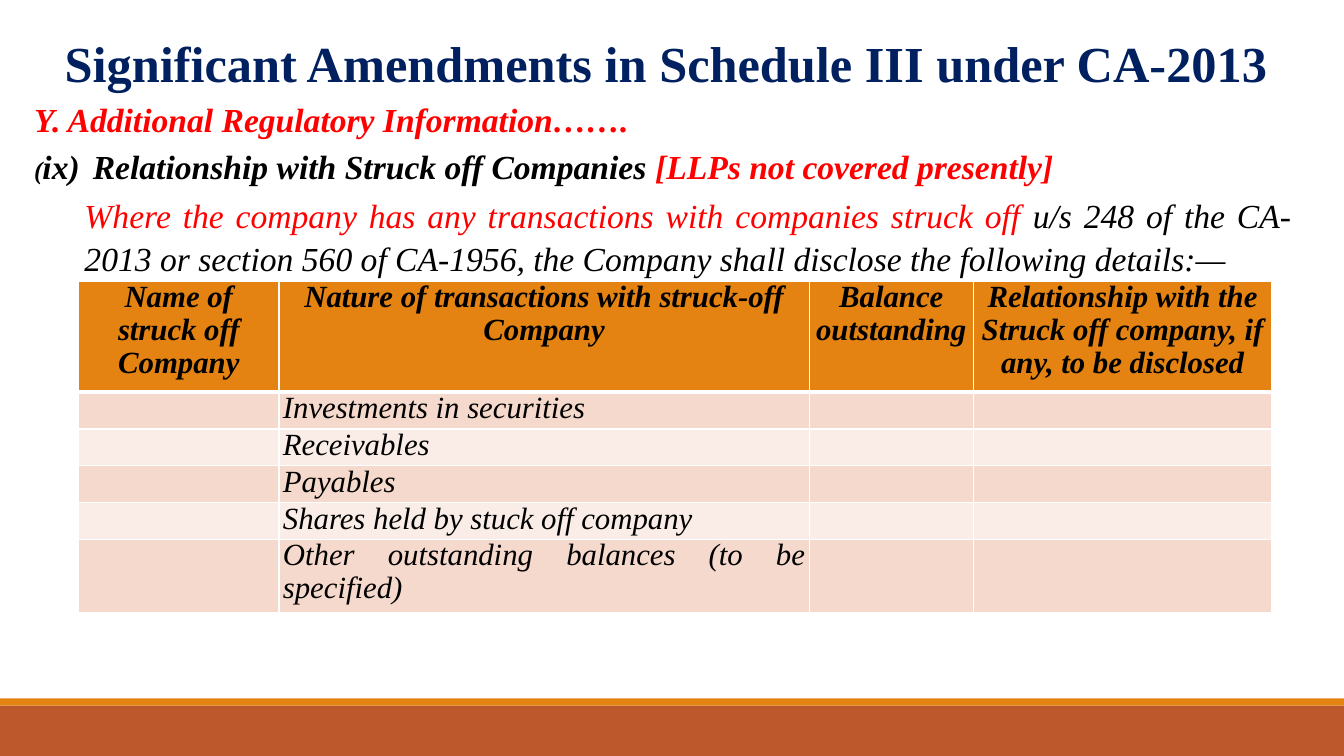
from lxml import etree
from pptx import Presentation
from pptx.dml.color import RGBColor
from pptx.enum.shapes import MSO_SHAPE
from pptx.enum.text import PP_ALIGN
from pptx.oxml.ns import qn
from pptx.util import Cm, Pt

RECT = MSO_SHAPE.RECTANGLE
CENTER, JUSTIFY = PP_ALIGN.CENTER, PP_ALIGN.JUSTIFY
BLACK, RED, NAVY = "000000", "FF0000", "002060"
ORANGE, RUST, WHITE = "E48312", "BD582C", "FFFFFF"


def color(code):
    return RGBColor.from_string(code)


def write(para, parts, align, gap, line):
    para.alignment = align
    para.space_before = para.space_after = Pt(gap)
    para.line_spacing = line
    for text, size, code, bold, italic in parts:
        run = para.add_run()
        run.text = text
        font = run.font
        font.name, font.size = "Times New Roman", Pt(size)
        font.bold, font.italic = bold, italic
        font.color.rgb = color(code)


deck = Presentation()
deck.slide_width, deck.slide_height = Cm(33.87), Cm(19.05)
slide = deck.slides.add_slide(deck.slide_layouts[6])
shapes = slide.shapes

for top, height, code in [(17.78, 1.27, RUST), (17.6, 0.18, ORANGE)]:
    bar = shapes.add_shape(RECT, 0, Cm(top), Cm(33.87), Cm(height))
    bar.shadow.inherit = False
    bar.fill.solid()
    bar.fill.fore_color.rgb = color(code)
    bar.line.fill.background()

title = shapes.add_textbox(Cm(0.61), Cm(0.58), Cm(32.36), Cm(1.8)).text_frame
title.word_wrap = True
heading = "Significant Amendments in Schedule III under CA-2013"
write(title.paragraphs[0], [(heading, 36, NAVY, True, False)], CENTER, 0, 1.07)

body = shapes.add_textbox(Cm(0.61), Cm(2.29), Cm(32.18), Cm(4.6)).text_frame
body.word_wrap = True
lines = [
    (1.5, -1.5, 1, [
        ("Y. Additional Regulatory Information…….", 24, RED, True, True)]),
    (1.27, -1.27, 2, [
        ("(", 18, BLACK, True, True),
        ("ix)\t Relationship with Struck off Companies ", 24, BLACK, True, True),
        ("[LLPs not covered presently]", 24, RED, True, True)]),
    (1.27, 0, 2, [
        ("Where the company has any transactions with companies struck off ",
         24, RED, False, True),
        ("u/s 248 of the CA- 2013 or section 560 of CA-1956, the Company shall "
         "disclose the following details:—", 24, BLACK, False, True)]),
]
for i, (margin, indent, gap, parts) in enumerate(lines):
    para = body.add_paragraph() if i else body.paragraphs[0]
    write(para, parts, JUSTIFY, gap, 1.07)
    props = para._p.get_or_add_pPr()
    props.set("marL", str(Cm(margin)))
    props.set("indent", str(Cm(indent)))

heads = ["Name of struck off Company",
         "Nature of transactions with struck-off Company",
         "Balance outstanding",
         "Relationship with the Struck off company, if any, to be disclosed"]
kinds = ["Investments in securities", "Receivables", "Payables",
         "Shares held by stuck off company",
         "Other outstanding balances (to be specified)"]
rows = [heads] + [["", kind, "", ""] for kind in kinds]
widths = [5.05, 13.36, 4.14, 7.52]
heights = [2.79] + [0.93] * 4 + [1.83]

table = shapes.add_table(len(rows), len(heads), Cm(1.98), Cm(7.09),
                         Cm(sum(widths)), Cm(sum(heights))).table
for col, width in zip(table.columns, widths):
    col.width = Cm(width)
for r, texts in enumerate(rows):
    table.rows[r].height = Cm(heights[r])
    fill = ORANGE if r == 0 else ["FAEDE7", "F5D9CC"][r % 2]
    for c, text in enumerate(texts):
        cell = table.cell(r, c)
        cell.margin_left = cell.margin_right = Cm(0.1)
        cell.margin_top = cell.margin_bottom = 0
        para = cell.text_frame.paragraphs[0]
        if text:
            write(para, [(text, 22, BLACK, r == 0, True)],
                  JUSTIFY if r else CENTER, 2, 0.96)
        else:
            para.font.size = Pt(18)
        props = cell._tc.get_or_add_tcPr()
        for side in ["lnL", "lnR", "lnT", "lnB"]:
            thick = (r == 0 and side == "lnB") or (r == 1 and side == "lnT")
            edge = etree.SubElement(props, qn("a:" + side),
                                    w=str(Pt(3 if thick else 1)))
            paint = etree.SubElement(edge, qn("a:solidFill"))
            etree.SubElement(paint, qn("a:srgbClr"), val=WHITE)
        cell.fill.solid()
        cell.fill.fore_color.rgb = color(fill)

deck.save("out.pptx")
